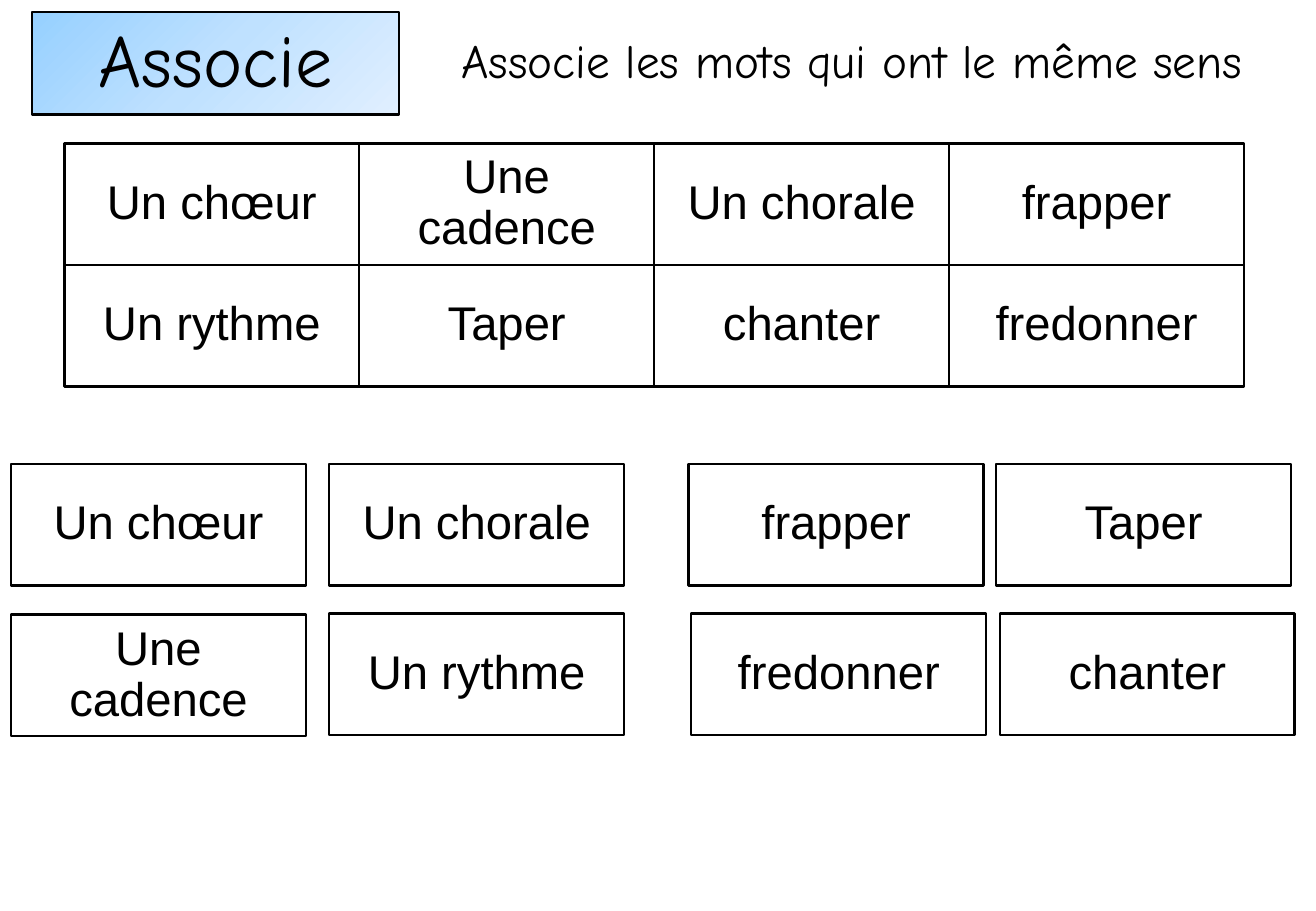
from copy import deepcopy
from dataclasses import dataclass

from pptx import Presentation
from pptx.dml.color import RGBColor
from pptx.enum.shapes import MSO_SHAPE
from pptx.enum.text import MSO_ANCHOR, PP_ALIGN
from pptx.oxml.ns import qn
from pptx.shapes.autoshape import Shape
from pptx.slide import Slide
from pptx.util import Pt

COLORS = {
    "ink": "000000",
    "sky": "96D0FF",
    "sky_middle": "BFE1FF",
    "sky_pale": "E0EFFF",
}
TITLE_GRADIENT = [(0, "sky"), (0.5, "sky_middle"), (1, "sky_pale")]
HEADING_FONT = "Comic Neue"
WORD_FONT = "Arial"

CARD_WIDTH, CARD_HEIGHT = 174.8, 72
GRID_LEFT, GRID_TOP = 38.1, 85
WORD_GRID = [
    ["Un chœur", "Une cadence", "Un chorale", "frapper"],
    ["Un rythme", "Taper", "chanter", "fredonner"],
]


@dataclass(frozen=True)
class WordCard:
    text: str
    left: float
    top: float


ANSWER_CARDS = [
    WordCard("Un chœur", 6.5, 275),
    WordCard("Un chorale", 195.1, 275),
    WordCard("frapper", 408.2, 275),
    WordCard("Taper", 590.4, 275),
    WordCard("Une cadence", 6.5, 364.3),
    WordCard("Un rythme", 195.1, 363.6),
    WordCard("fredonner", 409.7, 363.6),
    WordCard("chanter", 592.6, 363.6),
]


def rgb(name: str) -> RGBColor:
    return RGBColor.from_string(COLORS[name])


def write_text(shape: Shape, text: str, font: str, size: float, space_before: float) -> None:
    frame = shape.text_frame
    frame.word_wrap = True
    frame.vertical_anchor = MSO_ANCHOR.MIDDLE
    paragraph = frame.paragraphs[0]
    paragraph.alignment = PP_ALIGN.CENTER
    paragraph.line_spacing = 0.9
    paragraph.space_before = Pt(space_before)
    run = paragraph.add_run()
    run.text = text
    run.font.name = font
    run.font.size = Pt(size)
    run.font.color.rgb = rgb("ink")


def add_box(slide: Slide, left: float, top: float, width: float, height: float) -> Shape:
    """Add an unfilled rectangle with a black outline."""
    shape = slide.shapes.add_shape(
        MSO_SHAPE.RECTANGLE, Pt(left), Pt(top), Pt(width), Pt(height)
    )
    shape.shadow.inherit = False
    shape.fill.background()
    shape.line.color.rgb = rgb("ink")
    shape.line.width = Pt(1.5)
    return shape


def add_word_card(slide: Slide, card: WordCard) -> None:
    shape = add_box(slide, card.left, card.top, CARD_WIDTH, CARD_HEIGHT)
    write_text(shape, card.text, WORD_FONT, 28, 10)


def fill_title_gradient(shape: Shape) -> None:
    shape.fill.gradient()
    shape.fill.gradient_angle = 315
    first_stop = next(shape.element.iter(qn("a:gs")))
    first_stop.addnext(deepcopy(first_stop))
    for stop, (position, color) in zip(shape.fill.gradient_stops, TITLE_GRADIENT):
        stop.position = position
        stop.color.rgb = rgb(color)


def add_heading(slide: Slide) -> None:
    title = add_box(slide, 18.9, 7.1, 217.5, 60.7)
    fill_title_gradient(title)
    write_text(title, "Associe", HEADING_FONT, 44, 0)
    instruction = slide.shapes.add_textbox(Pt(236.4), Pt(7.1), Pt(537), Pt(60.7))
    write_text(instruction, "Associe les mots qui ont le même sens", HEADING_FONT, 28, 10)


def main() -> None:
    presentation = Presentation()
    presentation.slide_width = Pt(780)
    presentation.slide_height = Pt(540)
    slide = presentation.slides.add_slide(presentation.slide_layouts[6])

    add_heading(slide)
    grid_cards = [
        WordCard(text, GRID_LEFT + column * CARD_WIDTH, GRID_TOP + row * CARD_HEIGHT)
        for row, words in enumerate(WORD_GRID)
        for column, text in enumerate(words)
    ]
    for card in grid_cards + ANSWER_CARDS:
        add_word_card(slide, card)

    presentation.save("out.pptx")


if __name__ == "__main__":
    main()
